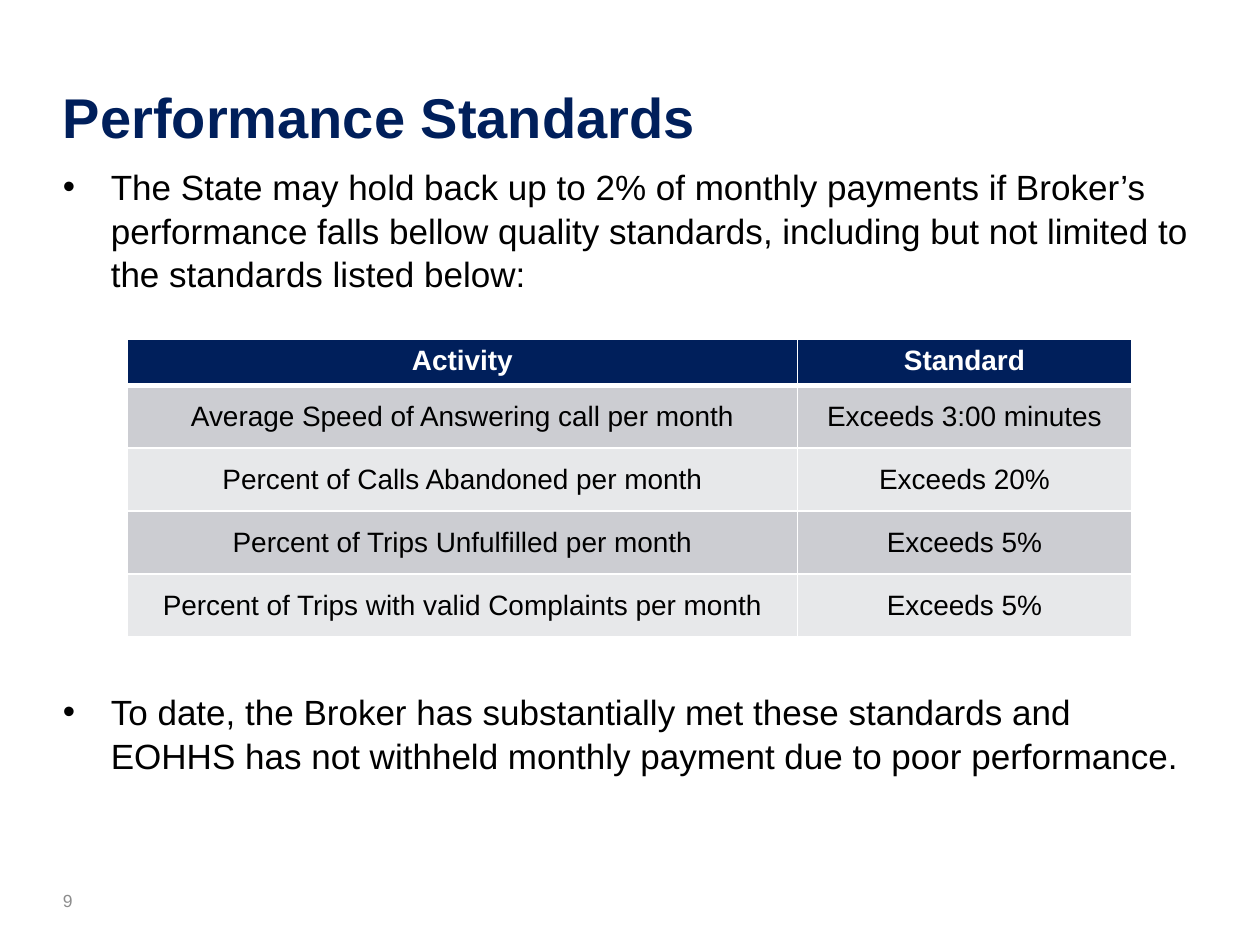
from lxml import etree
from pptx import Presentation
from pptx import util as u
from pptx.dml.color import RGBColor
from pptx.enum import text
from pptx.oxml.ns import qn

NAVY = RGBColor(0x00, 0x1F, 0x5B)
BLACK = RGBColor(0, 0, 0)
WHITE = RGBColor(0xFF, 0xFF, 0xFF)
GRAY = RGBColor(0x8C, 0x8C, 0x8C)
BANDS = RGBColor(0xCC, 0xCD, 0xD2), RGBColor(0xE7, 0xE8, 0xEA)

TITLE = "Performance Standards"
PAGE = "9"
POINTS = [
    (1.3, 1.1, "The State may hold back up to 2% of monthly payments if Broker’s "
     "performance falls bellow quality standards, including but not limited to "
     "the standards listed below:"),
    (5.47, 0.76, "To date, the Broker has substantially met these standards and "
     "EOHHS has not withheld monthly payment due to poor performance."),
]
ROWS = [
    ("Activity", "Standard"),
    ("Average Speed of Answering call per month", "Exceeds 3:00 minutes"),
    ("Percent of Calls Abandoned per month", "Exceeds 20%"),
    ("Percent of Trips Unfulfilled per month", "Exceeds 5%"),
    ("Percent of Trips with valid Complaints per month", "Exceeds 5%"),
]
COLS = 5.32, 2.65
HEAD, ROW = 0.35, 0.5
LEFT, WIDE, INDENT = 0.5, 9, 0.38


def style(para, size, color, bold=False):
    for run in para.runs:
        font = run.font
        font.name, font.size, font.bold = "Arial", u.Pt(size), bold
        font.color.rgb = color


def add_text(slide, words, top, width, height, size, color,
             bold=False, anchor=text.MSO_ANCHOR.MIDDLE):
    box = slide.shapes.add_textbox(*map(u.Inches, (LEFT, top, width, height)))
    frame = box.text_frame
    frame.word_wrap, frame.vertical_anchor = True, anchor
    frame.margin_left = frame.margin_right = 0
    frame.margin_top = frame.margin_bottom = 0
    frame.text = words
    para = frame.paragraphs[0]
    style(para, size, color, bold)
    return para


def add_bullet(para):
    para.line_spacing = 1.04
    props = para._p.get_or_add_pPr()
    props.set("marL", str(u.Inches(INDENT)))
    props.set("indent", str(-u.Inches(INDENT)))
    etree.SubElement(props, qn("a:buFont")).set("typeface", "Arial")
    etree.SubElement(props, qn("a:buChar")).set("char", "•")


def set_edges(cell, base):
    props = cell._tc.get_or_add_tcPr()
    widths = {"L": 1, "R": 1, "T": 1, "B": base}
    for spot, (side, width) in enumerate(widths.items()):
        line = etree.Element(qn("a:ln" + side), w=str(u.Pt(width)))
        fill = etree.SubElement(line, qn("a:solidFill"))
        etree.SubElement(fill, qn("a:srgbClr")).set("val", str(WHITE))
        props.insert(spot, line)


def add_grid(slide):
    high = HEAD + ROW * (len(ROWS) - 1)
    place = map(u.Inches, (1.01, 2.69, sum(COLS), high))
    table = slide.shapes.add_table(len(ROWS), len(COLS), *place).table
    for col, width in zip(table.columns, COLS):
        col.width = u.Inches(width)
    for r, row in enumerate(ROWS):
        head = r == 0
        table.rows[r].height = u.Inches(HEAD if head else ROW)
        for c, words in enumerate(row):
            cell = table.cell(r, c)
            cell.text = words
            if not head:
                cell.vertical_anchor = text.MSO_ANCHOR.MIDDLE
            cell.fill.solid()
            cell.fill.fore_color.rgb = NAVY if head else BANDS[(r - 1) % 2]
            para = cell.text_frame.paragraphs[0]
            para.alignment = text.PP_ALIGN.CENTER
            style(para, 16, WHITE if head else BLACK, head)
            set_edges(cell, 3 if r == 0 else 1)
            if r == 1:
                cell._tc.tcPr.find(qn("a:lnT")).set("w", str(u.Pt(3)))


def main():
    deck = Presentation()
    deck.slide_width, deck.slide_height = u.Inches(10), u.Inches(7.5)
    slide = deck.slides.add_slide(deck.slide_layouts[6])
    add_text(slide, TITLE, 0.3, WIDE, 1.25, 32, NAVY, True)
    for top, height, words in POINTS:
        add_bullet(add_text(slide, words, top, WIDE, height, 20, BLACK,
                            anchor=text.MSO_ANCHOR.TOP))
    add_text(slide, PAGE, 6.95, 0.6, 0.4, 10, GRAY)
    add_grid(slide)
    deck.save("out.pptx")


if __name__ == "__main__":
    main()
